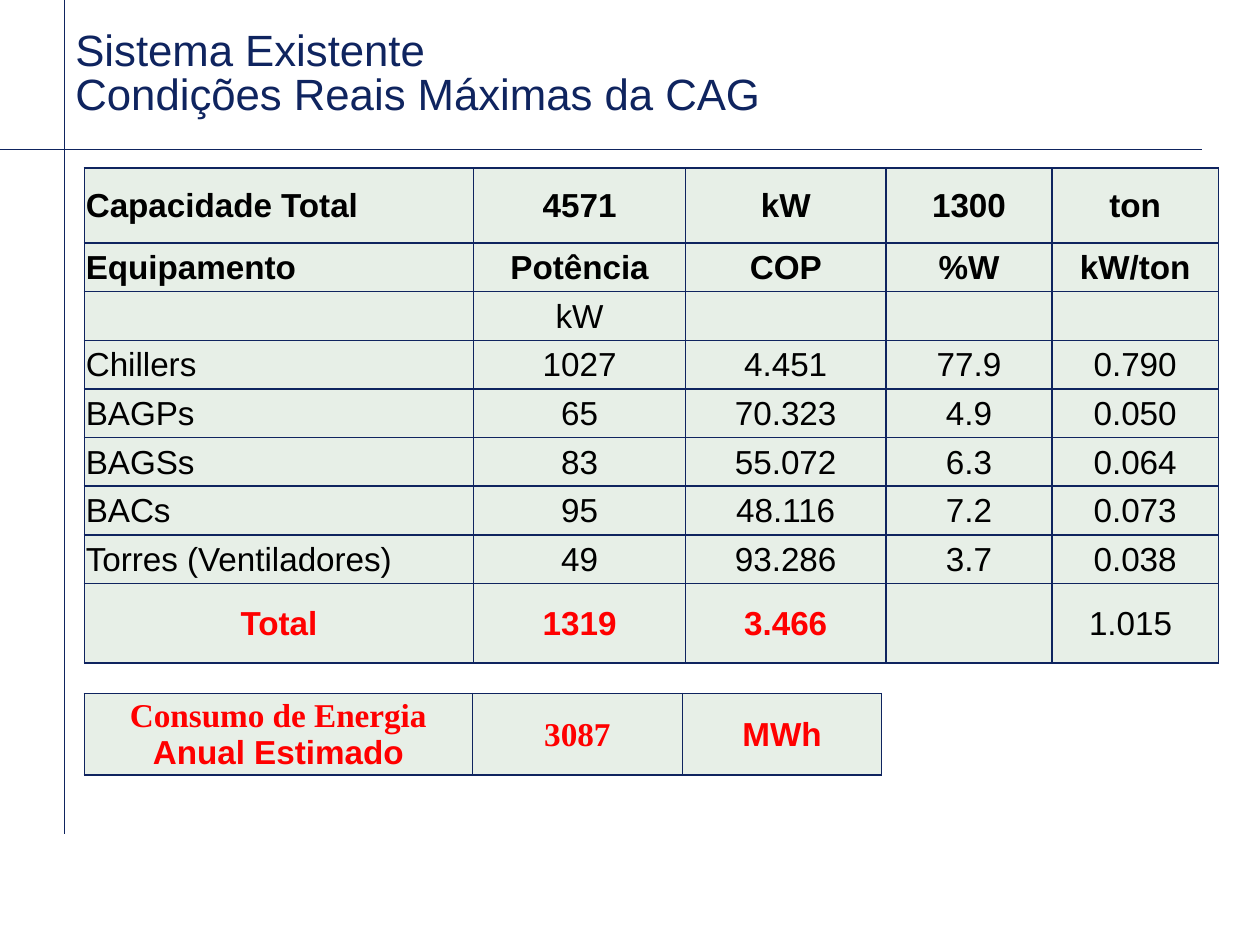
from dataclasses import dataclass

from lxml import etree
from pptx import Presentation, util as u
from pptx.dml import color
from pptx.enum import shapes, text
from pptx.oxml import ns


@dataclass(frozen=True)
class Theme:
    """Colours, fonts and sizes of the slide."""
    navy: str = "0F245F"
    black: str = "000000"
    red: str = "FF0000"
    cell: str = "E7EFE7"
    sans: str = "Arial"
    serif: str = "Times New Roman"
    title_size: int = 25
    table_size: int = 19
    rule: float = 0.75
    border: int = 1


THEME = Theme()

SYSTEM_ROWS = [
    ("Capacidade Total", "4571", "kW", "1300", "ton"),
    ("Equipamento", "Potência", "COP", "%W", "kW/ton"),
    ("", "kW", "", "", ""),
    ("Chillers", "1027", "4.451", "77.9", "0.790"),
    ("BAGPs", "65", "70.323", "4.9", "0.050"),
    ("BAGSs", "83", "55.072", "6.3", "0.064"),
    ("BACs", "95", "48.116", "7.2", "0.073"),
    ("Torres (Ventiladores)", "49", "93.286", "3.7", "0.038"),
    ("Total", "1319", "3.466", "", "1.015\u00a0"),
]
ENERGY_ROWS = [("Consumo de Energia\nAnual Estimado", "3087", "MWh")]
SERIF_TEXTS = ("Consumo de Energia", "3087")


def rgb(value):
    """Turn a hex string into a colour."""
    return color.RGBColor.from_string(value)


def style_runs(p, size, hue, font=THEME.sans, bold=False):
    """Format every run of a paragraph."""
    for r in p.runs:
        r.font.size = u.Pt(size)
        r.font.name = font
        r.font.bold = bold
        r.font.color.rgb = rgb(hue)


def add_rule(s, x1, y1, x2, y2):
    """Draw a thin straight line, with positions in centimetres."""
    line = s.shapes.add_connector(shapes.MSO_CONNECTOR.STRAIGHT,
                                  u.Cm(x1), u.Cm(y1), u.Cm(x2), u.Cm(y2))
    line.line.color.rgb = rgb(THEME.navy)
    line.line.width = u.Pt(THEME.rule)
    etree.SubElement(line._element.spPr, ns.qn("a:effectLst"))


def add_title(s, title):
    """Place the bottom-anchored slide title."""
    sp = s.shapes.add_textbox(u.Cm(1.27), u.Cm(0.64), u.Cm(19.25), u.Cm(1.9))
    tf = sp.text_frame
    tf.word_wrap = True
    tf.vertical_anchor = text.MSO_ANCHOR.BOTTOM
    p = tf.paragraphs[0]
    p.text = title
    p.line_spacing = 0.85
    style_runs(p, THEME.title_size, THEME.navy)


def add_borders(cell):
    """Outline a cell on all four sides."""
    tc_pr = cell._tc.get_or_add_tcPr()
    for side in ("lnL", "lnR", "lnT", "lnB"):
        ln = etree.SubElement(tc_pr, ns.qn(f"a:{side}"), w=str(u.Pt(THEME.border)))
        fill = etree.SubElement(ln, ns.qn("a:solidFill"))
        etree.SubElement(fill, ns.qn("a:srgbClr"), val=THEME.navy)


def fill_cell(cell, content, align, hue, bold):
    """Write and format one table cell."""
    add_borders(cell)
    cell.fill.solid()
    cell.fill.fore_color.rgb = rgb(THEME.cell)
    cell.margin_left = cell.margin_right = cell.margin_top = u.Cm(0.03)
    cell.margin_bottom = 0
    cell.vertical_anchor = text.MSO_ANCHOR.MIDDLE
    cell.text_frame.text = content
    for p in cell.text_frame.paragraphs:
        p.alignment = align
        font = THEME.serif if p.text in SERIF_TEXTS else THEME.sans
        style_runs(p, THEME.table_size, hue, font, bold)


def add_grid(s, top, widths, heights, rows, look):
    """Build a table whose cell look is chosen by row and column."""
    frame = s.shapes.add_table(len(rows), len(widths), u.Cm(1.7), u.Cm(top),
                               u.Cm(sum(widths)), u.Cm(sum(heights)))
    table = frame.table
    table.first_row = table.horz_banding = False
    for column, width in zip(table.columns, widths):
        column.width = u.Cm(width)
    for i, (height, row) in enumerate(zip(heights, rows)):
        table.rows[i].height = u.Cm(height)
        for j, content in enumerate(row):
            fill_cell(table.cell(i, j), content, *look(i, j))


def system_look(i, j):
    """Give alignment, colour and weight in the system table."""
    total = i == len(SYSTEM_ROWS) - 1
    align = text.PP_ALIGN.LEFT if j == 0 and not total else text.PP_ALIGN.CENTER
    marked = total and j < 3
    return align, THEME.red if marked else THEME.black, marked or i < 2


def energy_look(i, j):
    """Give alignment, colour and weight in the energy table."""
    return text.PP_ALIGN.CENTER, THEME.red, True


def main():
    """Build and save the slide."""
    prs = Presentation()
    prs.slide_width, prs.slide_height = u.Cm(25.4), u.Cm(19.05)
    s = prs.slides.add_slide(prs.slide_layouts[6])
    add_rule(s, 1.3, 16.81, 1.3, 0)
    add_rule(s, 0, 3.02, 24.23, 3.02)
    add_title(s, "Sistema Existente\vCondições Reais Máximas da CAG")
    add_grid(s, 3.39, [7.85, 4.27, 4.04, 3.35, 3.35],
             [1.51] + [0.98] * 7 + [1.61], SYSTEM_ROWS, system_look)
    add_grid(s, 13.98, [7.82, 4.24, 4.01], [1.61], ENERGY_ROWS, energy_look)
    prs.save("out.pptx")


if __name__ == "__main__":
    main()
